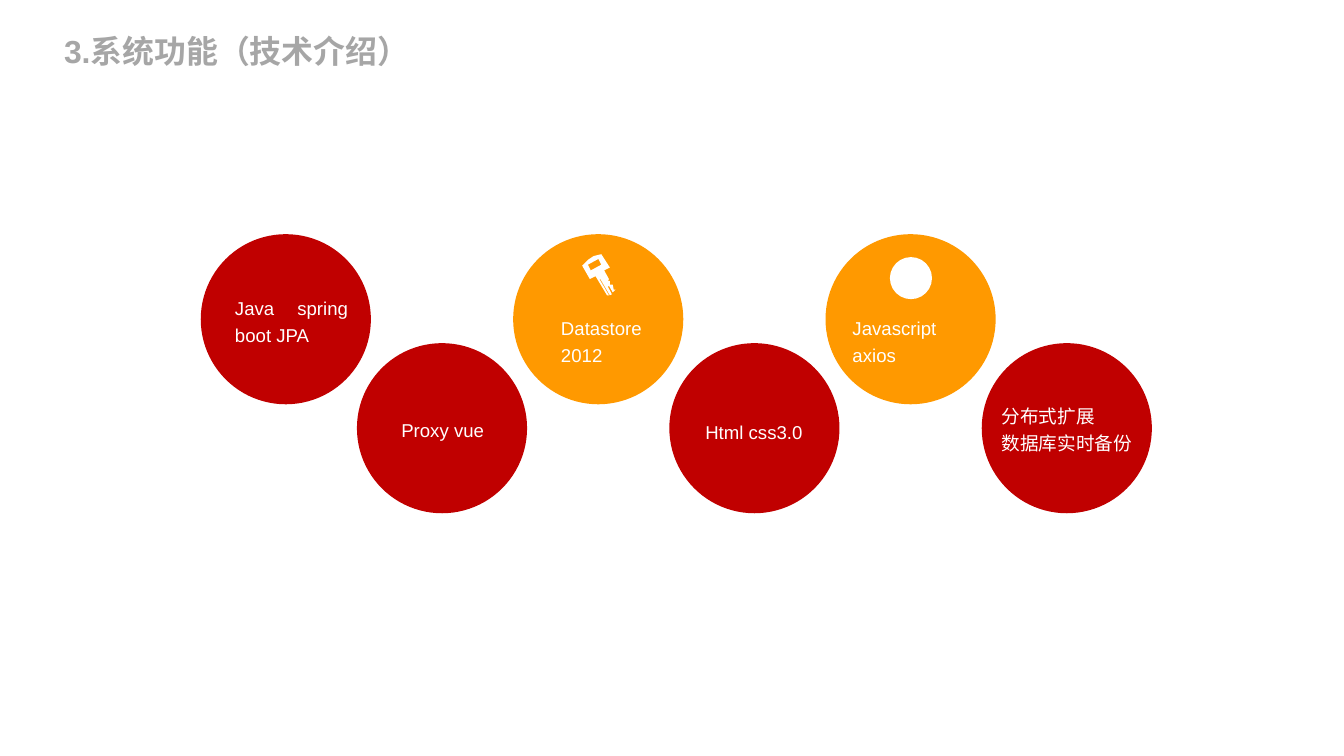
import dataclasses

import pptx
import pptx.dml.color
import pptx.enum.shapes
import pptx.enum.text
import pptx.util

Inches = pptx.util.Inches


@dataclasses.dataclass(frozen=True)
class Theme:
    font: str = "Arial"
    red: str = "C00000"
    orange: str = "FF9900"
    white: str = "FFFFFF"
    gray: str = "A6A6A6"
    title_size: int = 24
    label_size: int = 14
    label_spacing: float = 1.2


class SlideBuilder:
    def __init__(self, slide, theme):
        self.slide = slide
        self.theme = theme

    def color(self, value):
        return pptx.dml.color.RGBColor.from_string(value)

    def add_run(self, paragraph, text, size, color, bold=False):
        run = paragraph.add_run()
        run.text = text
        run.font.name = self.theme.font
        run.font.size = pptx.util.Pt(size)
        run.font.bold = bold
        run.font.color.rgb = self.color(color)

    def paint(self, shape, color):
        shape.shadow.inherit = False
        shape.fill.solid()
        shape.fill.fore_color.rgb = self.color(color)
        shape.line.fill.background()

    def title(self, text, left, top, width, height):
        shape = self.slide.shapes.title
        shape.left, shape.top = Inches(left), Inches(top)
        shape.width, shape.height = Inches(width), Inches(height)
        frame = shape.text_frame
        frame.margin_left = frame.margin_right = Inches(0)
        frame.margin_top = frame.margin_bottom = Inches(0)
        frame.vertical_anchor = pptx.enum.text.MSO_ANCHOR.MIDDLE
        paragraph = frame.paragraphs[0]
        paragraph.alignment = pptx.enum.text.PP_ALIGN.LEFT
        self.add_run(paragraph, text, self.theme.title_size, self.theme.gray, True)

    def circle(self, left, top, diameter, color):
        shape = self.slide.shapes.add_shape(
            pptx.enum.shapes.MSO_SHAPE.OVAL,
            Inches(left), Inches(top), Inches(diameter), Inches(diameter))
        self.paint(shape, color)

    def label(self, lines, left, top, width, height):
        box = self.slide.shapes.add_textbox(
            Inches(left), Inches(top), Inches(width), Inches(height))
        frame = box.text_frame
        frame.word_wrap = True
        for index, line in enumerate(lines):
            paragraph = frame.add_paragraph() if index else frame.paragraphs[0]
            paragraph.alignment = pptx.enum.text.PP_ALIGN.JUSTIFY
            paragraph.line_spacing = self.theme.label_spacing
            self.add_run(paragraph, line, self.theme.label_size, self.theme.white)

    def outline(self, contours, color):
        first, *holes = [[(Inches(x), Inches(y)) for x, y in contour] for contour in contours]
        builder = self.slide.shapes.build_freeform(*first[0])
        builder.add_line_segments(first[1:], close=True)
        for hole in holes:
            builder.move_to(*hole[0])
            builder.add_line_segments(hole[1:], close=True)
        self.paint(builder.convert_to_shape(), color)

    def key_icon(self):
        body = [(6.09, 2.78), (6.15, 2.72), (6.21, 2.68), (6.29, 2.66), (6.38, 2.80),
                (6.32, 2.83), (6.37, 2.92), (6.36, 2.94), (6.38, 2.94), (6.38, 2.98),
                (6.41, 2.98), (6.42, 3.03), (6.44, 3.03), (6.41, 3.06), (6.37, 2.99),
                (6.36, 3.00), (6.40, 3.08), (6.38, 3.09), (6.28, 2.92), (6.27, 2.92),
                (6.37, 3.09), (6.35, 3.09), (6.23, 2.89), (6.17, 2.92)]
        hole = [(6.15, 2.77), (6.18, 2.83), (6.29, 2.77), (6.26, 2.71)]
        self.outline([body, hole], self.theme.white)


def main():
    presentation = pptx.Presentation()
    presentation.slide_width = Inches(14.06)
    presentation.slide_height = Inches(7.91)
    slide = presentation.slides.add_slide(presentation.slide_layouts[5])
    theme = Theme()
    builder = SlideBuilder(slide, theme)
    builder.title("3.系统功能（技术介绍）", 0.67, 0.33, 5.45, 0.4)

    technologies = [
        (theme.red, ["Java spring boot JPA"], (2.36, 3.01, 1.38, 0.67)),
        (theme.red, ["Proxy vue"], (4.1, 4.29, 1.43, 0.36)),
        (theme.orange, ["Datastore 2012"], (5.77, 3.22, 1.19, 0.67)),
        (theme.red, ["Html css3.0"], (7.28, 4.31, 1.36, 0.36)),
        (theme.orange, ["Javascript axios"], (8.82, 3.22, 1.43, 0.64)),
        (theme.red, ["分布式扩展", "数据库实时备份"], (10.38, 4.14, 1.65, 0.67)),
    ]
    first_left, last_left = 2.1, 10.27
    step = (last_left - first_left) / (len(technologies) - 1)
    row_tops = (2.45, 3.59)
    for index, (color, lines, label_area) in enumerate(technologies):
        builder.circle(first_left + index * step, row_tops[index % 2], 1.78, color)
        builder.label(lines, *label_area)
    builder.key_icon()
    builder.circle(9.31, 2.69, 0.44, theme.white)

    presentation.save("out.pptx")


if __name__ == "__main__":
    main()
